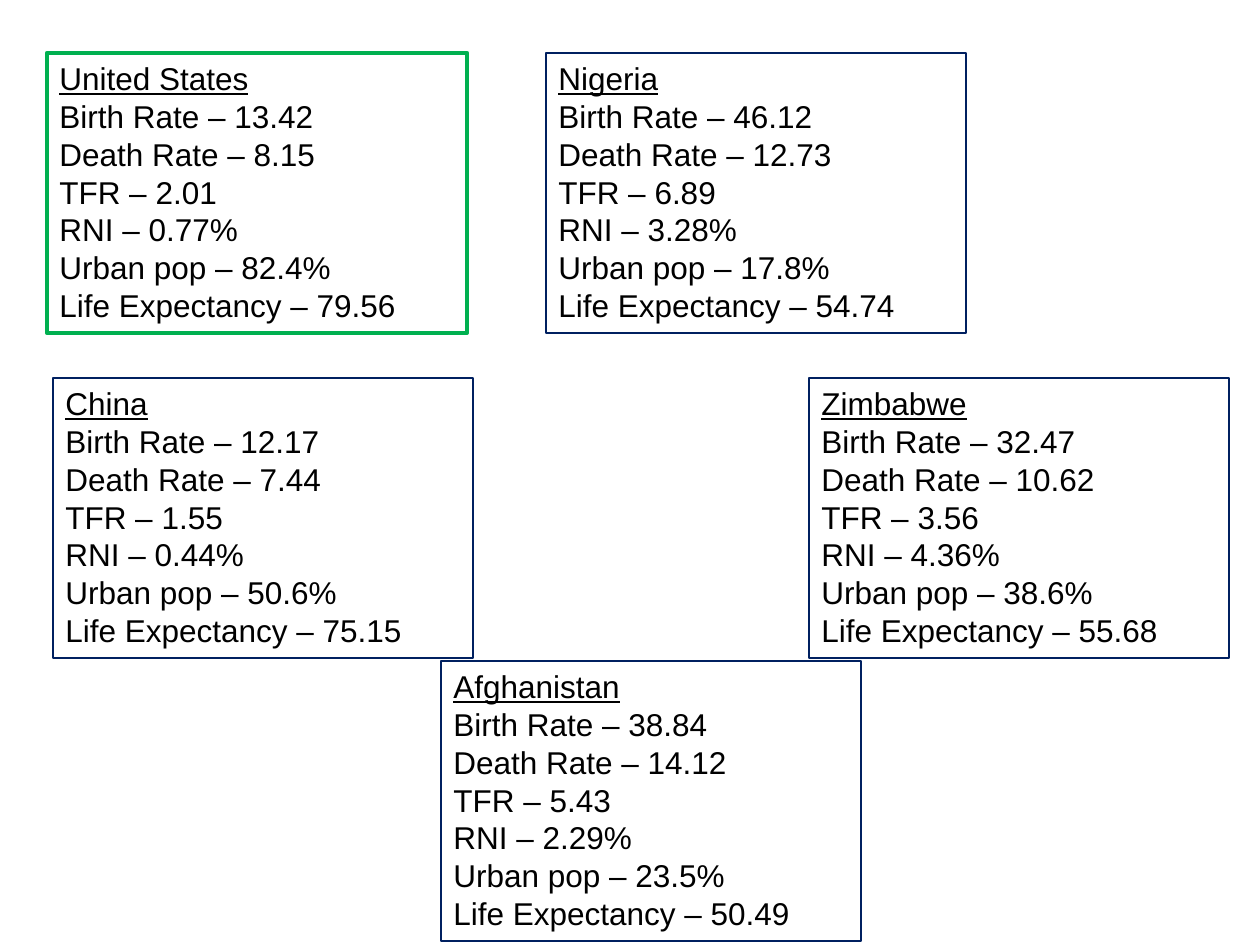
from pptx import Presentation
from pptx import util as u
from pptx.dml.color import RGBColor
from pptx.enum import text

PX = 914400 // 126
COLORS = {"navy": "002060", "green": "00B050", "black": "000000"}
CARD_WIDTH, CARD_HEIGHT = 420, 280
ROW_TOPS = (53, 378, 661)

LABELS = ("Birth Rate", "Death Rate", "TFR", "RNI", "Urban pop", "Life Expectancy")
# country, left, row, line colour, line width in points, values in label order
COUNTRIES = [
    ("China", 53, 1, "navy", 0.75,
     ("12.17", "7.44", "1.55", "0.44%", "50.6%", "75.15")),
    ("Afghanistan", 441, 2, "navy", 0.75,
     ("38.84", "14.12", "5.43", "2.29%", "23.5%", "50.49")),
    ("Nigeria", 546, 0, "navy", 0.75,
     ("46.12", "12.73", "6.89", "3.28%", "17.8%", "54.74")),
    ("Zimbabwe", 809, 1, "navy", 0.75,
     ("32.47", "10.62", "3.56", "4.36%", "38.6%", "55.68")),
    ("United States", 47, 0, "green", 2.5,
     ("13.42", "8.15", "2.01", "0.77%", "82.4%", "79.56")),
]


def color(name):
    return RGBColor.from_string(COLORS[name])


def add_card(page, country, left, row, line_color, line_width, values):
    box = page.shapes.add_textbox(
        left * PX, ROW_TOPS[row] * PX, CARD_WIDTH * PX, CARD_HEIGHT * PX)
    box.line.color.rgb = color(line_color)
    box.line.width = u.Pt(line_width)
    frame = box.text_frame
    frame.word_wrap = True
    frame.auto_size = text.MSO_AUTO_SIZE.SHAPE_TO_FIT_TEXT
    facts = [f"{label} – {value}" for label, value in zip(LABELS, values)]
    frame.text = "\n".join([country] + facts)
    for para in frame.paragraphs:
        font = para.runs[0].font
        font.name = "Arial"
        font.size = u.Pt(18)
        font.color.rgb = color("black")
    frame.paragraphs[0].runs[0].font.underline = True


def main():
    deck = Presentation()
    deck.slide_width, deck.slide_height = u.Inches(10), u.Inches(7.5)
    page = deck.slides.add_slide(deck.slide_layouts[6])
    for country in COUNTRIES:
        add_card(page, *country)
    deck.save("out.pptx")


if __name__ == "__main__":
    main()
